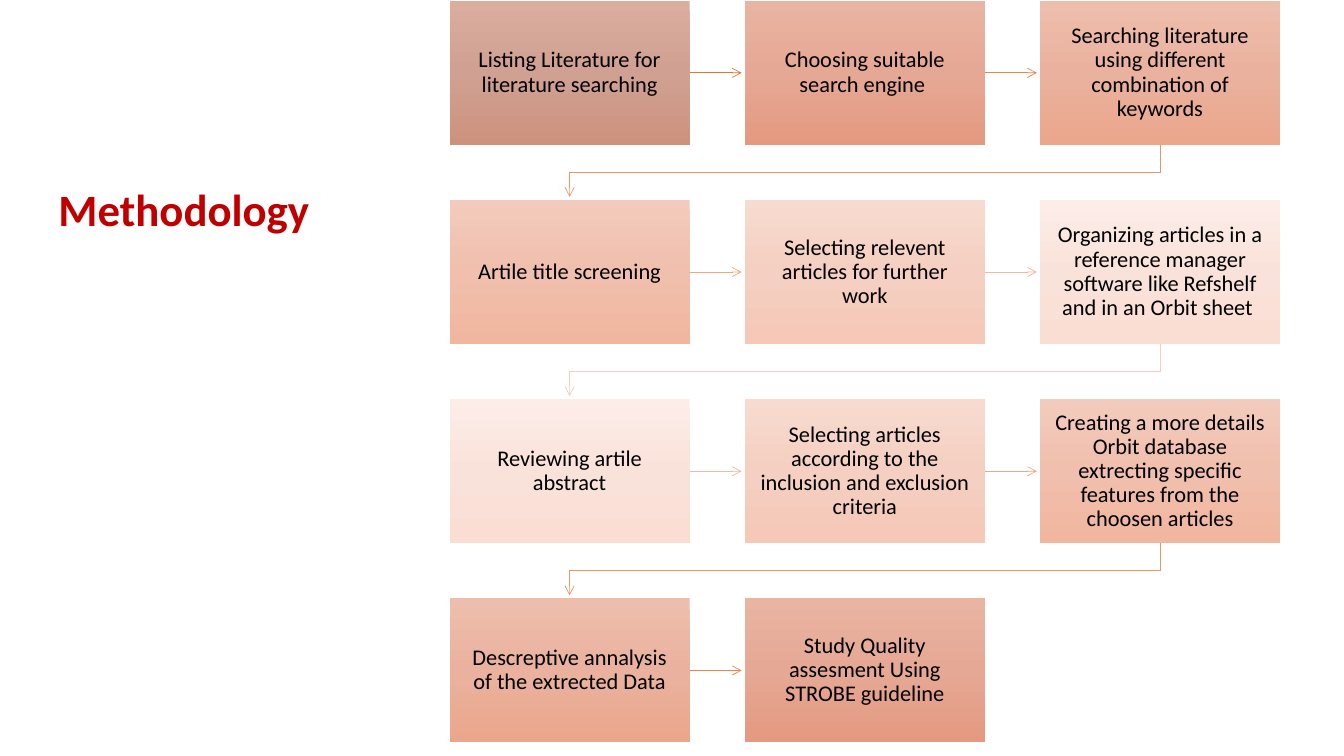
"""Build the Methodology slide: a snaking flow of eleven research steps."""
import copy

import pptx
import pptx.dml.color
import pptx.enum.shapes
import pptx.enum.text
import pptx.oxml
import pptx.oxml.ns
import pptx.util
from pptx.util import Cm

COLOURS = {"title": "C00000", "text": "000000"}
TONES = [
    {"fill": ["DAAD9F", "D0A192", "CD927E"], "arrow": "E2772F"},
    {"fill": ["E9B4A2", "E5A894", "E59980"], "arrow": "E6854C"},
    {"fill": ["EEBEAC", "EAB29E", "EBA68C"], "arrow": "EA9568"},
    {"fill": ["F3CBBC", "F0BFAD", "F1B69F"], "arrow": "EEA685"},
    {"fill": ["F8DBD0", "F5CFC1", "F6C8B8"], "arrow": "F2B8A2"},
    {"fill": ["FCEDE8", "F9E2DA", "FADED4"], "arrow": "F6CCBF"},
]
STEPS = [
    "Listing Literature for literature searching",
    "Choosing suitable search engine ",
    "Searching literature using different combination of keywords",
    "Artile title screening",
    "Selecting relevent articles for further work",
    "Organizing articles in a reference manager software like Refshelf and in an Orbit sheet ",
    "Reviewing artile abstract",
    "Selecting articles according to the inclusion and exclusion criteria",
    "Creating a more details Orbit database extrecting specific features from the choosen articles",
    "Descreptive annalysis of the extrected Data",
    "Study Quality assesment Using STROBE guideline",
]
COLUMNS = 3
LEFT, TOP = 11.33, 0.02
COLUMN_PITCH, ROW_PITCH = 7.44, 5.02
BOX_WIDTH, BOX_HEIGHT = 6.05, 3.63
ARROW_LENGTH, ELBOW_DROP = 1.31, 0.69
FRAME = {"word_wrap": True, "vertical_anchor": pptx.enum.text.MSO_ANCHOR.MIDDLE}
FRAME.update({f"margin_{side}": Cm(0.3) for side in ("left", "right", "top", "bottom")})
TITLE_FRAME = {
    "word_wrap": True,
    "vertical_anchor": pptx.enum.text.MSO_ANCHOR.TOP,
    "auto_size": pptx.enum.text.MSO_AUTO_SIZE.NONE,
}


def set_values(target, values):
    for name, value in values.items():
        setattr(target, name, value)


def write_text(frame, text, size, bold, colour, frame_values, paragraph_values):
    set_values(frame, frame_values)
    paragraph = frame.paragraphs[0]
    set_values(paragraph, paragraph_values)
    run = paragraph.add_run()
    run.text = text
    set_values(run.font, {"name": "Calibri", "size": pptx.util.Pt(size), "bold": bold})
    run.font.color.rgb = pptx.dml.color.RGBColor.from_string(COLOURS[colour])


presentation = pptx.Presentation()
presentation.slide_width, presentation.slide_height = Cm(33.87), Cm(19.05)
slide = presentation.slides.add_slide(presentation.slide_layouts[5])

title = slide.shapes.title
set_values(title, {"left": Cm(1.22), "top": Cm(4.45), "width": Cm(8.69), "height": Cm(1.63)})
write_text(title.text_frame, "Methodology", 32, True, "title", TITLE_FRAME,
           {"alignment": pptx.enum.text.PP_ALIGN.LEFT})

for index, step in enumerate(STEPS):
    row, column = divmod(index, COLUMNS)
    left, top = LEFT + column * COLUMN_PITCH, TOP + row * ROW_PITCH
    right, bottom = left + BOX_WIDTH, top + BOX_HEIGHT
    last = len(STEPS) - 1

    box = slide.shapes.add_shape(pptx.enum.shapes.MSO_SHAPE.RECTANGLE,
                                 Cm(left), Cm(top), Cm(BOX_WIDTH), Cm(BOX_HEIGHT))
    box.shadow.inherit = False
    box.line.fill.background()
    box.fill.gradient()
    box.fill.gradient_angle = 270
    stop_list = box._element.spPr.find(".//" + pptx.oxml.ns.qn("a:gsLst"))
    stop_list.append(copy.deepcopy(stop_list[0]))
    tone = TONES[min(index, last + 1 - index)]
    for stop, position, colour in zip(box.fill.gradient_stops, (0, 0.5, 1), tone["fill"]):
        stop.position = position
        stop.color.rgb = pptx.dml.color.RGBColor.from_string(colour)
    write_text(box.text_frame, step, 16, False, "text", FRAME,
               {"alignment": pptx.enum.text.PP_ALIGN.CENTER, "line_spacing": 0.9})

    if index == last:
        break
    if column < COLUMNS - 1:
        middle = top + BOX_HEIGHT / 2
        arrow = slide.shapes.add_connector(pptx.enum.shapes.MSO_CONNECTOR.STRAIGHT,
                                           Cm(right), Cm(middle),
                                           Cm(right + ARROW_LENGTH), Cm(middle))
    else:
        start, end = left + BOX_WIDTH / 2, LEFT + BOX_WIDTH / 2
        turn = bottom + ELBOW_DROP
        outline = slide.shapes.build_freeform(Cm(start), Cm(bottom))
        outline.add_line_segments(
            [(Cm(start), Cm(turn)), (Cm(end), Cm(turn)), (Cm(end), Cm(bottom + ARROW_LENGTH))],
            close=False)
        arrow = outline.convert_to_shape()
        arrow.fill.background()
    arrow.line.width = pptx.util.Pt(0.5)
    arrow.line.color.rgb = pptx.dml.color.RGBColor.from_string(
        TONES[min(index, last - index)]["arrow"])
    properties = arrow._element.spPr
    head = pptx.oxml.parse_xml(f'<a:tailEnd {pptx.oxml.ns.nsdecls("a")} type="arrow"/>')
    properties.find(pptx.oxml.ns.qn("a:ln")).append(head)
    properties.append(pptx.oxml.parse_xml(f'<a:effectLst {pptx.oxml.ns.nsdecls("a")}/>'))

presentation.save("out.pptx")
